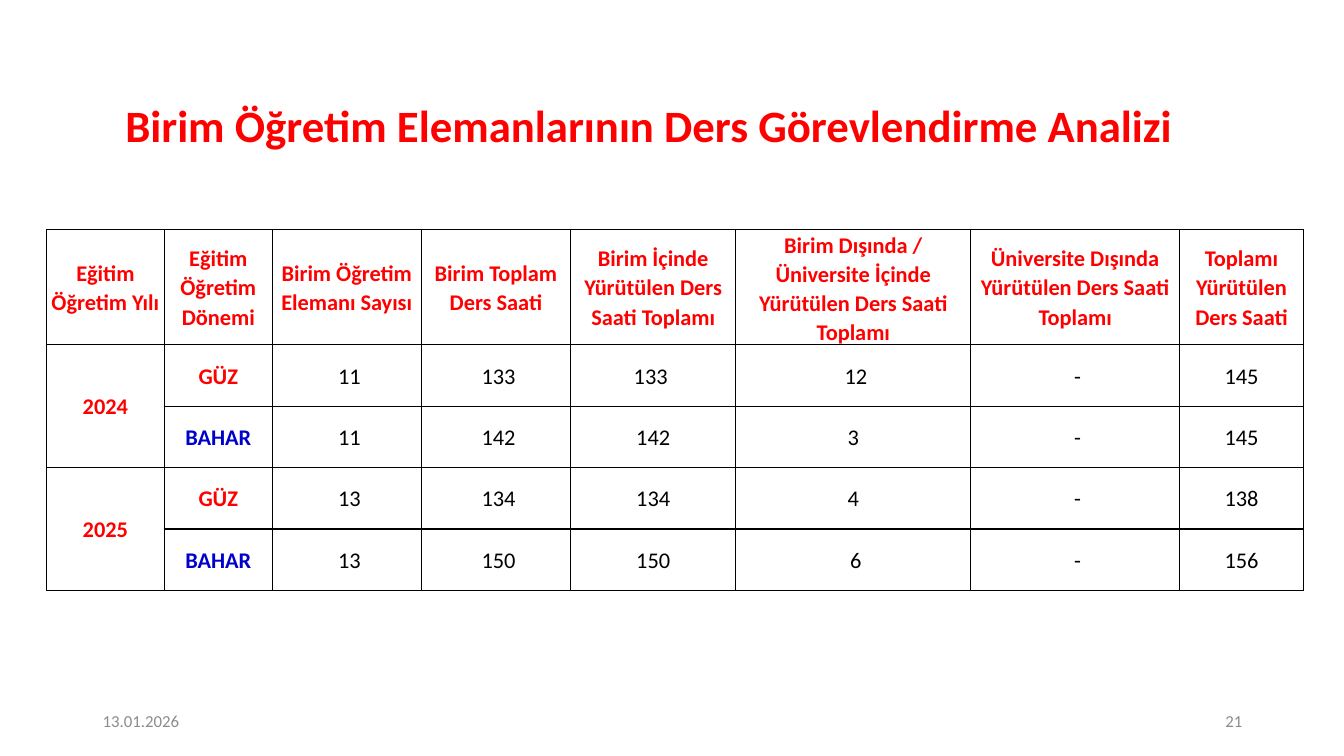
from lxml.etree import SubElement
from pptx import Presentation
from pptx.dml.color import RGBColor
from pptx.enum.text import MSO_ANCHOR, PP_ALIGN
from pptx.oxml.ns import qn
from pptx.util import Inches, Pt

RED = RGBColor(0xFF, 0x00, 0x00)
BLUE = RGBColor(0x00, 0x00, 0xCC)
BLACK = RGBColor(0x00, 0x00, 0x00)
GRAY = RGBColor(0x8C, 0x8C, 0x8C)

deck = Presentation()
deck.slide_width, deck.slide_height = Inches(13.33), Inches(7.5)
slide = deck.slides.add_slide(deck.slide_layouts[6])

# One grid step is a hundredth of the slide's width or height
COL = deck.slide_width / 100
ROW = deck.slide_height / 100


def write(frame, text, size=16, color=BLACK, bold=False,
          align=PP_ALIGN.CENTER, space=1.0):
    frame.word_wrap = True
    frame.vertical_anchor = MSO_ANCHOR.MIDDLE
    para = frame.paragraphs[0]
    para.alignment = align
    para.line_spacing = space
    run = para.add_run()
    run.text = text
    font = run.font
    font.name, font.size, font.bold = "Calibri", Pt(size), bold
    font.color.rgb = color


def border(cell):
    props = cell._tc.get_or_add_tcPr()
    for at, side in enumerate(("a:lnL", "a:lnR", "a:lnT", "a:lnB")):
        line = SubElement(props, qn(side), w=str(Pt(1)))
        props.remove(line)
        props.insert(at, line)
        fill = SubElement(line, qn("a:solidFill"))
        SubElement(fill, qn("a:srgbClr"), val=str(BLACK))


# Title, date and page number
foot = dict(size=12, color=GRAY)
texts = [
    ("Birim Öğretim Elemanlarının Ders Görevlendirme Analizi",
     (6.15, 12, 84.32, 9.87), dict(size=32, color=RED, bold=True, space=0.9)),
    ("13.01.2026", (6.9, 92.67, 22.5, 5.33), dict(foot, align=PP_ALIGN.LEFT)),
    ("21", (70.67, 92.67, 22.5, 5.33), dict(foot, align=PP_ALIGN.RIGHT)),
]
for text, (x, y, w, h), form in texts:
    box = slide.shapes.add_textbox(
        round(x * COL), round(y * ROW), round(w * COL), round(h * ROW))
    write(box.text_frame, text, **form)

# Table content; an empty year joins the cell above
data = [
    ["Eğitim Öğretim Yılı", "Eğitim Öğretim Dönemi",
     "Birim Öğretim Elemanı Sayısı", "Birim Toplam Ders Saati",
     "Birim İçinde Yürütülen Ders Saati Toplamı",
     "Birim Dışında / Üniversite İçinde Yürütülen Ders Saati Toplamı",
     "Üniversite Dışında Yürütülen Ders Saati Toplamı",
     "Toplamı Yürütülen Ders Saati"],
    ["2024", "GÜZ", " 11", " 133", "133 ", " 12", " -", "145"],
    ["", "BAHAR", " 11", " 142", "142", "3", " -", "145"],
    ["2025", "GÜZ", " 13", " 134", "134", "4", " -", "138"],
    ["", "BAHAR", " 13", " 150", "150", " 6", " -", "156"],
]
widths = [8.78, 8.03, 11.1, 11.1, 12.3, 17.48, 15.53, 9.23]
heights = [14.93] + [8.13] * 4

# Table grid
grid = slide.shapes.add_table(
    len(heights), len(widths), round(3.45 * COL), round(30.4 * ROW),
    round(sum(widths) * COL), round(sum(heights) * ROW)).table
grid.first_row = grid.horz_banding = False
for col, width in zip(grid.columns, widths):
    col.width = round(width * COL)
for row, height in zip(grid.rows, heights):
    row.height = round(height * ROW)

# Table cells
for r, line in enumerate(data):
    for c, text in enumerate(line):
        cell = grid.cell(r, c)
        cell.margin_left = cell.margin_right = Inches(0.05)
        cell.margin_top = cell.margin_bottom = 0
        cell.vertical_anchor = MSO_ANCHOR.MIDDLE
        cell.fill.background()
        border(cell)
        if not text:
            grid.cell(r - 1, c).merge(cell)
            continue
        head = r == 0 or c < 2
        color = BLUE if text == "BAHAR" else RED if head else BLACK
        write(cell.text_frame, text, color=color, bold=head, space=1.07)

deck.save("out.pptx")
